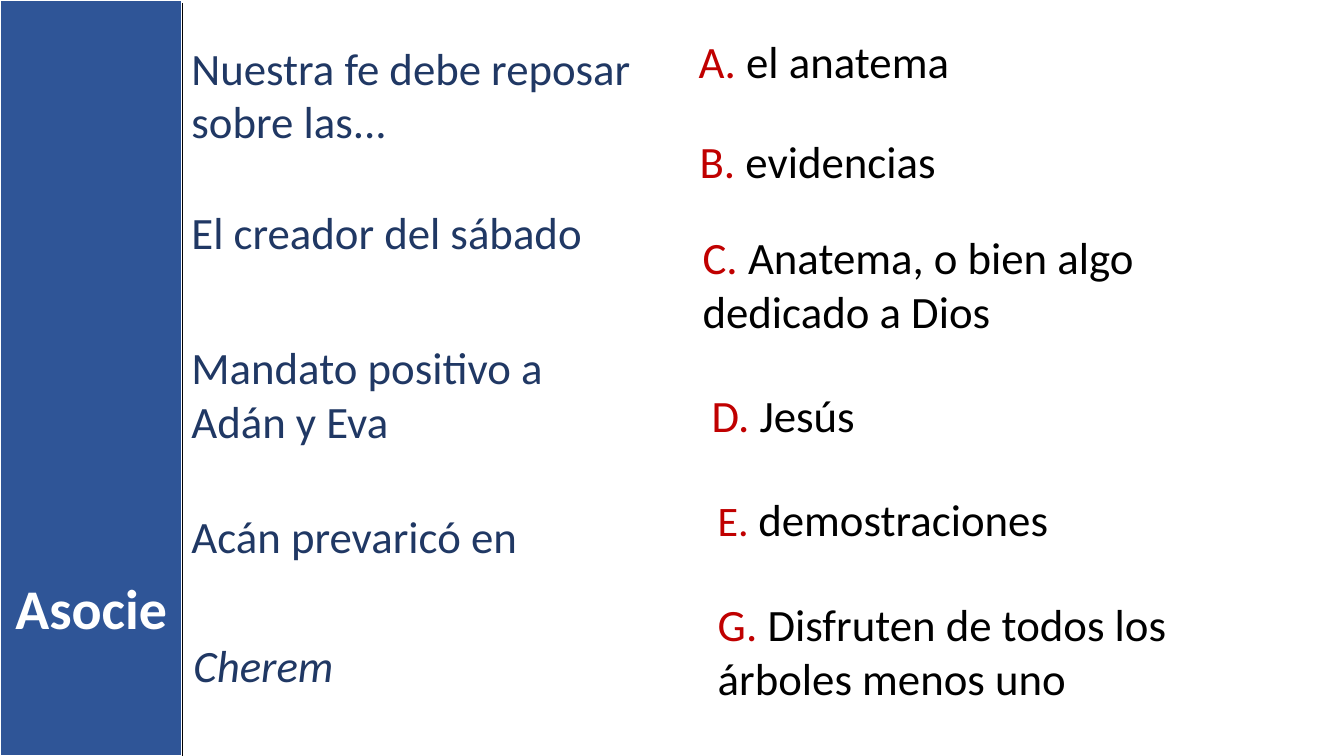
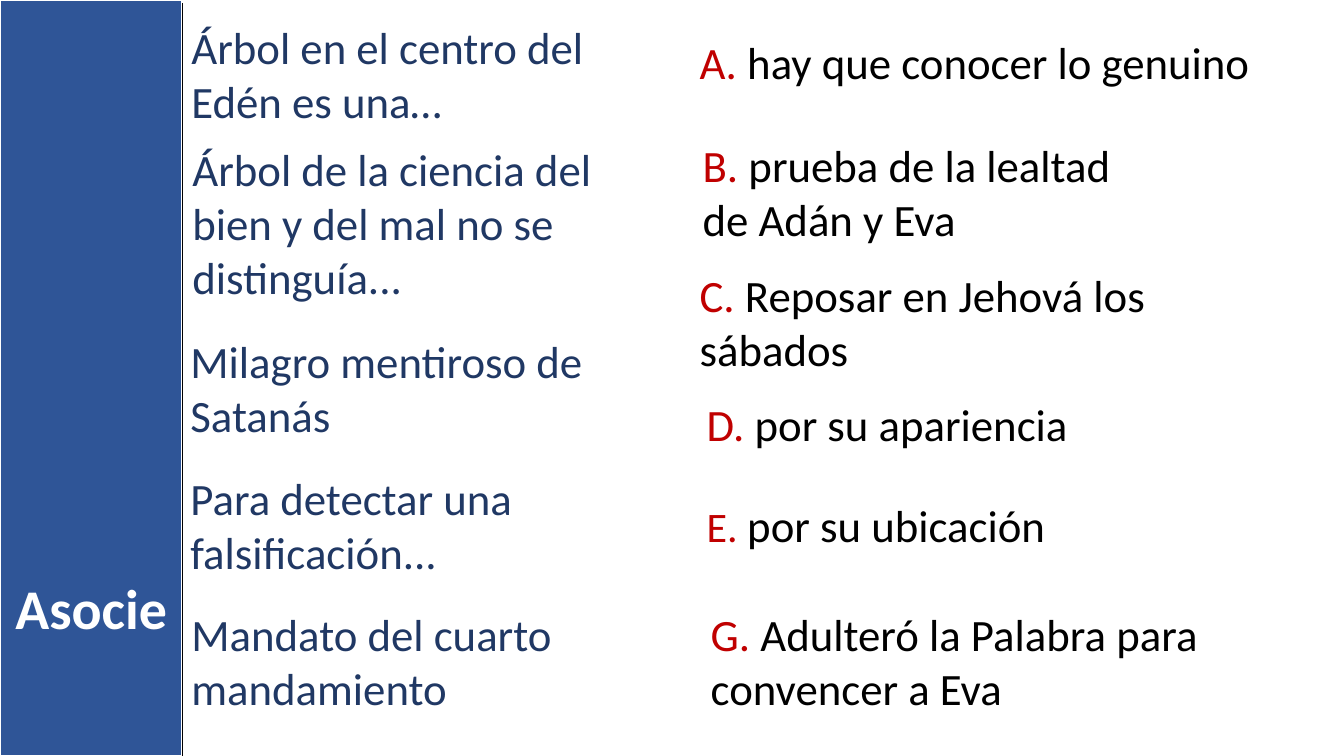
import pptx
import pptx.util
import pptx.dml.color
import pptx.enum.shapes
import pptx.enum.text
import pptx.oxml.ns
import lxml.etree

PX = 9144  # 100 px to the inch
SLIDE_W, SLIDE_H = 1333, 750
BAND_W = 181
FONT = "Calibri"
COLORS = {"band": "2F5597", "white": "FFFFFF", "black": "000000",
          "prompt": "203864", "letter": "C00000"}
TITLE = "Asocie"
ITALIC_PROMPTS = {"Cherem"}
LETTER_SIZES = {"E": 30}

# Prompts: left, top, width, lines, text
# Answers: left, top, width, lines, letter, text
SLIDES = [
    {"prompts": [
        (180, 35, 462, 2, "Nuestra fe debe reposar sobre las..."),
        (180, 198, 462, 1, "El creador del sábado"),
        (180, 332, 443, 2, "Mandato positivo a Adán y Eva"),
        (180, 500, 485, 1, "Acán prevaricó en"),
        (182, 628, 351, 1, "Cherem")],
     "answers": [
        (683, 29, 630, 1, "A", "el anatema"),
        (684, 128, 542, 1, "B", "evidencias"),
        (687, 223, 598, 2, "C", "Anatema, o bien algo dedicado a Dios"),
        (696, 380, 604, 1, "D", "Jesús"),
        (702, 483, 575, 1, "E", "demostraciones"),
        (702, 587, 582, 2, "G", "Disfruten de todos los árboles menos uno")]},
    {"prompts": [
        (180, 15, 462, 2, "Árbol en el centro del Edén es una…"),
        (181, 136, 463, 3,
         "Árbol de la ciencia del bien y del mal no se distinguía..."),
        (179, 326, 436, 2, "Milagro mentiroso de Satanás"),
        (179, 462, 461, 2, "Para detectar una falsificación..."),
        (180, 597, 477, 2, "Mandato del cuarto mandamiento")],
     "answers": [
        (684, 30, 630, 1, "A", "hay que conocer lo genuino"),
        (687, 132, 452, 2, "B", "prueba de la lealtad de Adán y Eva"),
        (684, 261, 598, 2, "C", "Reposar en Jehová los sábados"),
        (691, 389, 604, 1, "D", "por su apariencia"),
        (691, 489, 575, 1, "E", "por su ubicación"),
        (695, 597, 582, 2, "G", "Adulteró la Palabra para convencer a Eva")]},
]


def px(*lengths):
    return [pptx.util.Emu(n * PX) for n in lengths]


def rgb(name):
    return pptx.dml.color.RGBColor.from_string(COLORS[name])


def style(r, color, size=32, bold=False, italic=False):
    r.font.name = FONT
    r.font.size = pptx.util.Pt(size)
    r.font.color.rgb = rgb(color)
    r.font.bold = bold
    r.font.italic = italic


def add_text(s, left, top, width, lines):
    """Add a wrapping text box sized for its lines; return its paragraph."""
    tf = s.shapes.add_textbox(*px(left, top, width, 10 + 54 * lines)).text_frame
    tf.word_wrap = True
    return tf.paragraphs[0]


def add_band(s):
    # Blue band, placed behind the title
    band = s.shapes.add_shape(pptx.enum.shapes.MSO_SHAPE.RECTANGLE,
                              *px(0, 0, BAND_W, SLIDE_H))
    band.shadow.inherit = False
    band.fill.solid()
    band.fill.fore_color.rgb = rgb("band")
    band.line.color.rgb = rgb("white")
    band.line.width = pptx.util.Pt(1.5)

    # Title
    title = s.shapes.title
    title.element.addprevious(band.element)
    title.left, title.top, title.width, title.height = px(0, 564, BAND_W, 77)
    tf = title.text_frame
    tf.text = TITLE
    tf.auto_size = pptx.enum.text.MSO_AUTO_SIZE.NONE
    tf.vertical_anchor = pptx.enum.text.MSO_ANCHOR.TOP
    p = tf.paragraphs[0]
    p.alignment = pptx.enum.text.PP_ALIGN.CENTER
    style(p.runs[0], "white", 40, bold=True)


def add_edge(s):
    edge = s.shapes.add_connector(pptx.enum.shapes.MSO_CONNECTOR.STRAIGHT,
                                  *px(BAND_W, 3, BAND_W, SLIDE_H))
    edge.line.color.rgb = rgb("black")
    edge.line.width = pptx.util.Pt(1)
    lxml.etree.SubElement(edge.element.spPr, pptx.oxml.ns.qn("a:effectLst"))


def build_slide(prs, content):
    s = prs.slides.add_slide(prs.slide_layouts[5])
    add_band(s)
    for *place, text in content["prompts"]:
        p = add_text(s, *place)
        p.text = text
        style(p.runs[0], "prompt", italic=text in ITALIC_PROMPTS)
    for *place, letter, text in content["answers"]:
        p = add_text(s, *place)
        r = p.add_run()
        r.text = f"{letter}. "
        style(r, "letter", LETTER_SIZES.get(letter, 32))
        r = p.add_run()
        r.text = text
        style(r, "black")
    add_edge(s)


def main():
    prs = pptx.Presentation()
    prs.slide_width, prs.slide_height = px(SLIDE_W, SLIDE_H)
    for content in SLIDES:
        build_slide(prs, content)
    prs.save("out.pptx")


if __name__ == "__main__":
    main()
